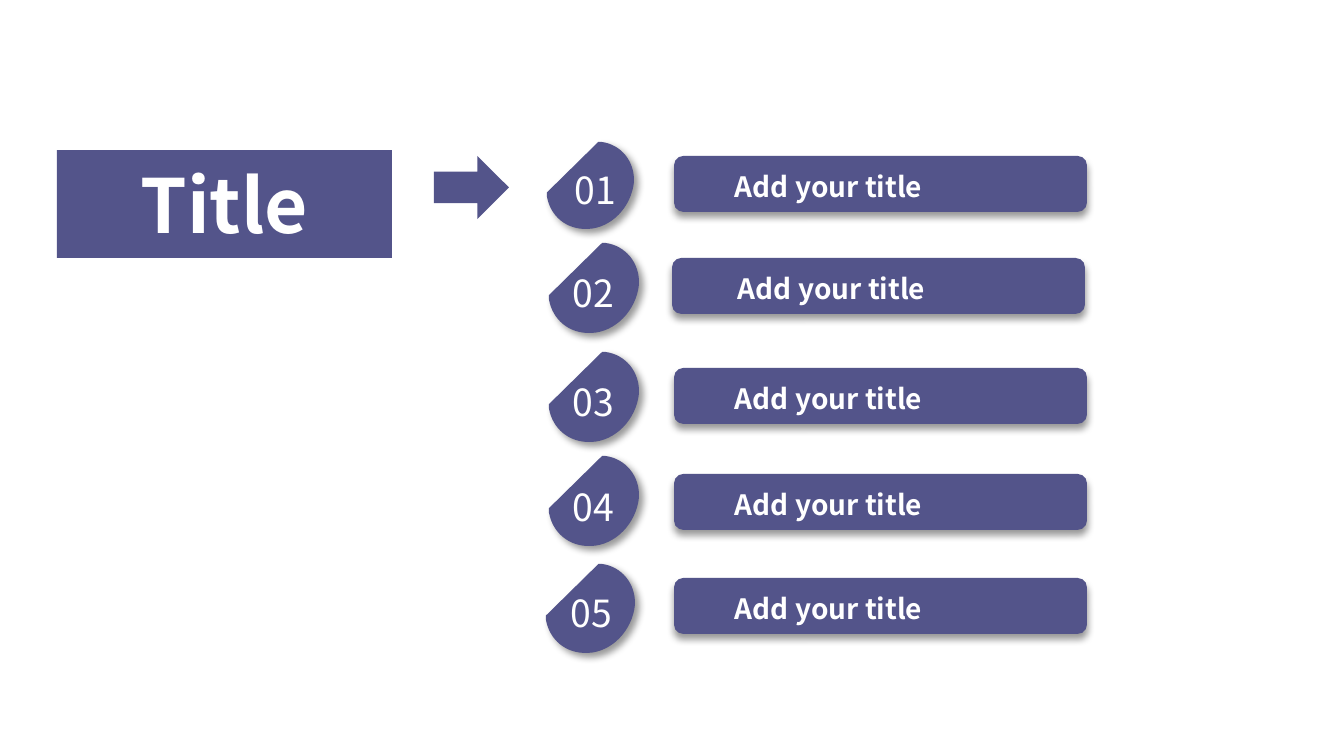
"""Build a title slide with an arrow and five numbered title bars."""
from dataclasses import dataclass

from lxml.etree import Element, SubElement
from pptx import Presentation
from pptx.dml.color import RGBColor
from pptx.enum.shapes import MSO_SHAPE
from pptx.enum.text import MSO_ANCHOR, MSO_AUTO_SIZE, PP_ALIGN
from pptx.oxml.ns import qn
from pptx.util import Emu, Pt

PX = 914400 / 134.4
FONT = "Noto Sans CJK JP"
COLORS = {"main": "53548A", "text": "FFFFFF", "shadow": "000000"}
BADGE_START = (100, 46)
BADGE_SEGMENTS = [
    [(101, 22), (85, 3), (63, 0)],
    [(59, 0)],
    [(0, 58)],
    [(0, 63)],
    [(4, 85), (22, 101), (47, 100)],
    [(74, 99), (97, 75), BADGE_START],
]


@dataclass
class Row:
    number: str
    badge: tuple[int, int, int]
    number_at: tuple[int, int]
    bar_at: tuple[int, int]
    label_x: int


ROWS = [
    Row("01", (547, 142, 87), (562, 160), (674, 156), 718),
    Row("02", (549, 243, 90), (560, 263), (672, 258), 721),
    Row("03", (549, 352, 90), (560, 372), (674, 368), 718),
    Row("04", (549, 456, 90), (560, 477), (674, 474), 718),
    Row("05", (546, 564, 89), (558, 583), (674, 578), 718),
]


def px(value: float) -> Emu:
    return Emu(round(value * PX))


def paint(sp, shadow_angle: int | None = None) -> None:
    sp.fill.solid()
    sp.fill.fore_color.rgb = RGBColor.from_string(COLORS["main"])
    sp.line.fill.background()
    if shadow_angle is None:
        sp.shadow.inherit = False
        return
    effects = SubElement(sp.element.spPr, qn("a:effectLst"))
    shadow = SubElement(
        effects, qn("a:outerShdw"), blurRad=str(Pt(4)), dist=str(Pt(3)),
        dir=str(shadow_angle * 60000), algn="t", rotWithShape="0")
    color = SubElement(shadow, qn("a:srgbClr"), val=COLORS["shadow"])
    SubElement(color, qn("a:alpha"), val="40000")


def write(sp, text: str, *, size: int, bold: bool = False,
          align: PP_ALIGN = PP_ALIGN.LEFT, inset: tuple[int, int] = (17, 9),
          anchor: MSO_ANCHOR = MSO_ANCHOR.TOP,
          fit: MSO_AUTO_SIZE = MSO_AUTO_SIZE.SHAPE_TO_FIT_TEXT) -> None:
    tf = sp.text_frame
    tf.word_wrap = True
    tf.auto_size = fit
    tf.vertical_anchor = anchor
    tf.margin_left = tf.margin_right = px(inset[0])
    tf.margin_top = tf.margin_bottom = px(inset[1])
    p = tf.paragraphs[0]
    p.alignment = align
    r = p.add_run()
    r.text = text
    r.font.name = FONT
    r.font.size = Pt(size)
    r.font.bold = bold
    r.font.color.rgb = RGBColor.from_string(COLORS["text"])


def bend_segments(sp, unit: float) -> None:
    lines = list(sp.element.iter(qn("a:lnTo")))
    for line, (*controls, _) in zip(lines, BADGE_SEGMENTS):
        if controls:
            line.tag = qn("a:cubicBezTo")
        for i, (u, v) in enumerate(controls):
            line.insert(i, Element(qn("a:pt"), x=str(px(u * unit)), y=str(px(v * unit))))


def draw_badge(s, row: Row) -> None:
    shapes = s.shapes.add_group_shape().shapes
    x, y, size = row.badge
    unit = size / 100
    corners = [(px(x + u * unit), px(y + v * unit))
               for u, v in [BADGE_START, *(seg[-1] for seg in BADGE_SEGMENTS)]]
    builder = shapes.build_freeform(*corners[0])
    builder.add_line_segments(corners[1:], close=True)
    sp = builder.convert_to_shape()
    bend_segments(sp, unit)
    paint(sp, shadow_angle=45)
    box = shapes.add_textbox(*map(px, (*row.number_at, 85, 59)))
    write(box, row.number, size=20, inset=(13, 7))


def draw_bar(s, row: Row) -> None:
    shapes = s.shapes.add_group_shape().shapes
    x, y = row.bar_at
    bar = shapes.add_shape(MSO_SHAPE.ROUNDED_RECTANGLE, *map(px, (x, y, 413, 56)))
    paint(bar, shadow_angle=90)
    label = shapes.add_textbox(*map(px, (row.label_x, y + 5, 296, 52)))
    write(label, "Add your title", size=15, bold=True)


def main() -> None:
    prs = Presentation()
    prs.slide_width, prs.slide_height = px(1344), px(756)
    s = prs.slides.add_slide(prs.slide_layouts[5])
    title = s.shapes.title
    title.left, title.top, title.width, title.height = map(px, (57, 150, 335, 108))
    title.fill.solid()
    title.fill.fore_color.rgb = RGBColor.from_string(COLORS["main"])
    write(title, "Title", size=40, bold=True, align=PP_ALIGN.CENTER,
          anchor=MSO_ANCHOR.MIDDLE, fit=MSO_AUTO_SIZE.NONE)
    for row in ROWS:
        draw_badge(s, row)
    for row in ROWS:
        draw_bar(s, row)
    arrow = s.shapes.add_shape(MSO_SHAPE.RIGHT_ARROW, *map(px, (434, 156, 75, 63)))
    paint(arrow)
    prs.save("out.pptx")


if __name__ == "__main__":
    main()
